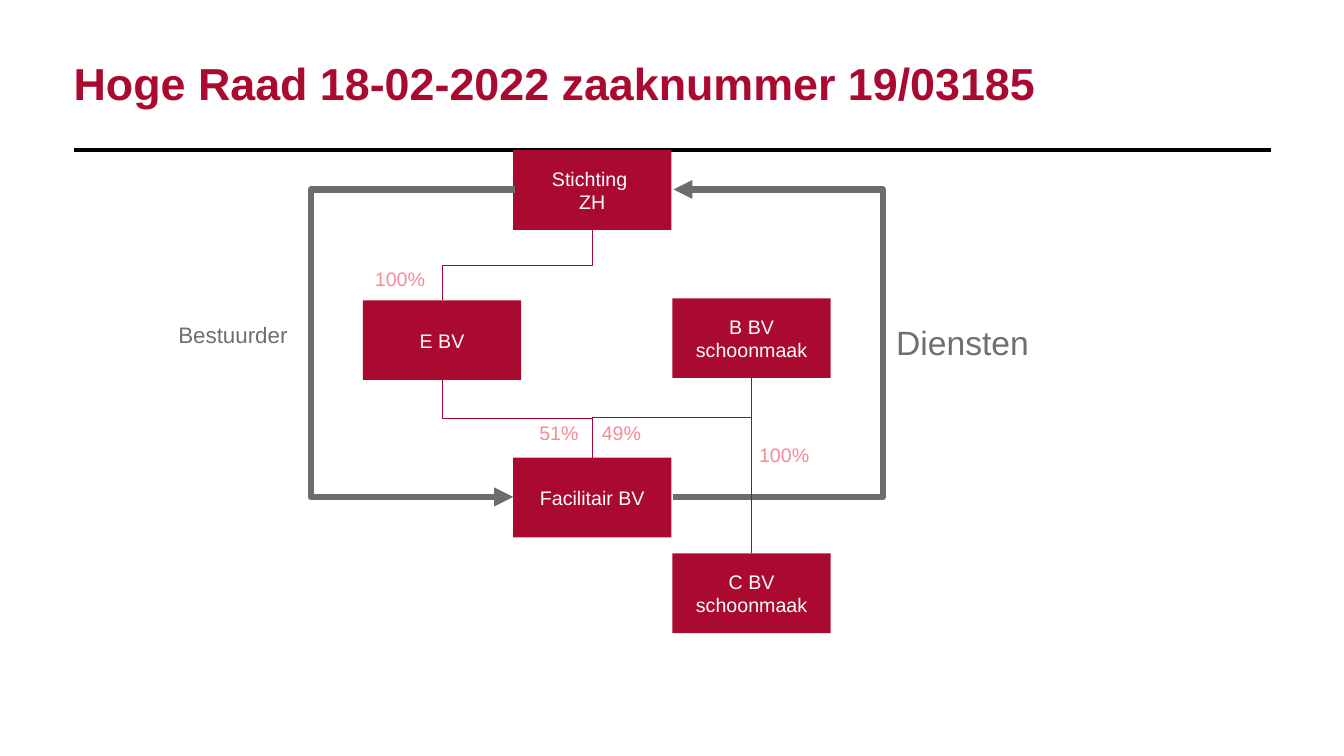
from dataclasses import dataclass

from lxml import etree
from pptx import Presentation
from pptx.dml.color import RGBColor
from pptx.enum import shapes, text
from pptx.oxml import ns
from pptx.util import Inches, Pt


@dataclass(frozen=True)
class Theme:
    font: str = "Arial"
    red: str = "AA0A2F"
    link: str = "AA062C"
    pink: str = "F6899A"
    grey: str = "706F6F"
    arrow: str = "6E6D6D"
    black: str = "000000"
    white: str = "FFFFFF"
    title_size: float = 32
    large_size: float = 24
    medium_size: float = 16
    small_size: float = 14
    link_width: float = 0.75
    rule_width: float = 3
    arrow_width: float = 4.5


THEME = Theme()
TITLE = "Hoge Raad 18-02-2022 zaaknummer 19/03185"
BOX_WIDTH, BOX_HEIGHT = 1.57, 0.79
ENTITIES = {
    "stichting": ("Stichting \vZH", 5.09, 1.49),
    "e": ("E BV", 3.6, 2.98),
    "facilitair": ("Facilitair BV", 5.09, 4.54),
    "b": ("B BV schoonmaak", 6.67, 2.96),
    "c": ("C BV schoonmaak", 6.67, 5.49),
}
HOLDINGS = [("stichting", "e"), ("e", "facilitair"), ("b", "facilitair")]
ARROWS = [
    ((6.67, 4.93), (6.68, 1.88), 8.79),
    ((5.11, 1.88), (5.09, 4.93), 3.09),
]
LABELS = [
    ("100%", 3.62, 2.6, 0.79, 0.34, THEME.small_size, THEME.pink),
    ("51%", 5.25, 4.13, 0.62, 0.34, THEME.small_size, THEME.pink),
    ("49%", 5.87, 4.13, 0.62, 0.34, THEME.small_size, THEME.pink),
    ("100%", 7.43, 4.34, 0.79, 0.34, THEME.small_size, THEME.pink),
    ("Diensten", 8.79, 3.14, 1.57, 0.5, THEME.large_size, THEME.grey),
    ("Bestuurder", 1.67, 3.14, 1.57, 0.37, THEME.medium_size, THEME.grey),
]


def style_text(frame, size, color, bold=False):
    for paragraph in frame.paragraphs:
        font = paragraph.font
        font.name, font.size, font.bold = THEME.font, Pt(size), bold
        font.color.rgb = RGBColor.from_string(color)


def add_title(slide):
    title = slide.shapes.title
    title.left, title.top = Inches(0.73), Inches(0.51)
    title.width, title.height = Inches(11.88), Inches(0.58)
    frame = title.text_frame
    frame.text = TITLE
    frame.margin_left = frame.margin_right = 0
    frame.margin_top = frame.margin_bottom = 0
    frame.vertical_anchor = text.MSO_ANCHOR.BOTTOM
    frame.auto_size = text.MSO_AUTO_SIZE.NONE
    frame.paragraphs[0].alignment = text.PP_ALIGN.LEFT
    frame.paragraphs[0].line_spacing = 0.9
    style_text(frame, THEME.title_size, THEME.red, True)


def add_entity(slide, label, left, top):
    shape = slide.shapes.add_shape(
        shapes.MSO_SHAPE.RECTANGLE,
        Inches(left), Inches(top), Inches(BOX_WIDTH), Inches(BOX_HEIGHT),
    )
    shape.shadow.inherit = False
    shape.fill.solid()
    shape.fill.fore_color.rgb = RGBColor.from_string(THEME.red)
    shape.line.fill.background()
    frame = shape.text_frame
    frame.text = label
    frame.word_wrap = True
    frame.vertical_anchor = text.MSO_ANCHOR.MIDDLE
    frame.paragraphs[0].alignment = text.PP_ALIGN.CENTER
    style_text(frame, THEME.small_size, THEME.white)
    return shape


def add_label(slide, label, left, top, width, height, size, color):
    box = slide.shapes.add_textbox(
        Inches(left), Inches(top), Inches(width), Inches(height)
    )
    frame = box.text_frame
    frame.text = label
    frame.word_wrap = True
    frame.auto_size = text.MSO_AUTO_SIZE.SHAPE_TO_FIT_TEXT
    style_text(frame, size, color)


def add_line(slide, kind, start, end, color, width):
    connector = slide.shapes.add_connector(
        kind, *(Inches(value) for value in (*start, *end))
    )
    connector.line.color.rgb = RGBColor.from_string(color)
    connector.line.width = Pt(width)
    etree.SubElement(connector._element.spPr, ns.qn("a:effectLst"))
    return connector


def add_holding(slide, owner, company):
    _, owner_left, owner_top = ENTITIES[owner]
    _, company_left, company_top = ENTITIES[company]
    start_y = owner_top + BOX_HEIGHT
    half_x = (company_left - owner_left) / 2
    half_y = (company_top - start_y) / 2
    center_x = owner_left + BOX_WIDTH / 2 + half_x
    center_y = start_y + half_y
    connector = add_line(
        slide, shapes.MSO_CONNECTOR.ELBOW,
        (center_x - half_y, center_y + half_x),
        (center_x + half_y, center_y - half_x),
        THEME.link, THEME.link_width,
    )
    connector._element.spPr.find(ns.qn("a:xfrm")).set("rot", str(90 * 60000))


def add_arrow(slide, start, end, lane):
    connector = add_line(
        slide, shapes.MSO_CONNECTOR.ELBOW, start, end,
        THEME.arrow, THEME.arrow_width,
    )
    bend = round((lane - start[0]) / (end[0] - start[0]) * 100000)
    properties = connector._element.spPr
    adjustments = properties.find(ns.qn("a:prstGeom")).get_or_add_avLst()
    etree.SubElement(adjustments, ns.qn("a:gd"), name="adj1", fmla=f"val {bend}")
    outline = properties.find(ns.qn("a:ln"))
    etree.SubElement(outline, ns.qn("a:tailEnd"), type="triangle")


def main():
    presentation = Presentation()
    presentation.slide_width = Inches(13.33)
    presentation.slide_height = Inches(7.5)
    slide = presentation.slides.add_slide(presentation.slide_layouts[5])
    straight = shapes.MSO_CONNECTOR.STRAIGHT
    add_line(slide, straight, (12.61, 1.49), (0.73, 1.49),
             THEME.black, THEME.rule_width)
    add_title(slide)
    boxes = {name: add_entity(slide, *entity) for name, entity in ENTITIES.items()}
    for arrow in ARROWS:
        add_arrow(slide, *arrow)
    for holding in HOLDINGS:
        add_holding(slide, *holding)
    subsidiary = add_line(slide, straight, (7.45, 3.75), (7.45, 5.49),
                          THEME.link, THEME.link_width)
    subsidiary.begin_connect(boxes["b"], 2)
    subsidiary.end_connect(boxes["c"], 0)
    for label in LABELS:
        add_label(slide, *label)
    presentation.save("out.pptx")


if __name__ == "__main__":
    main()
